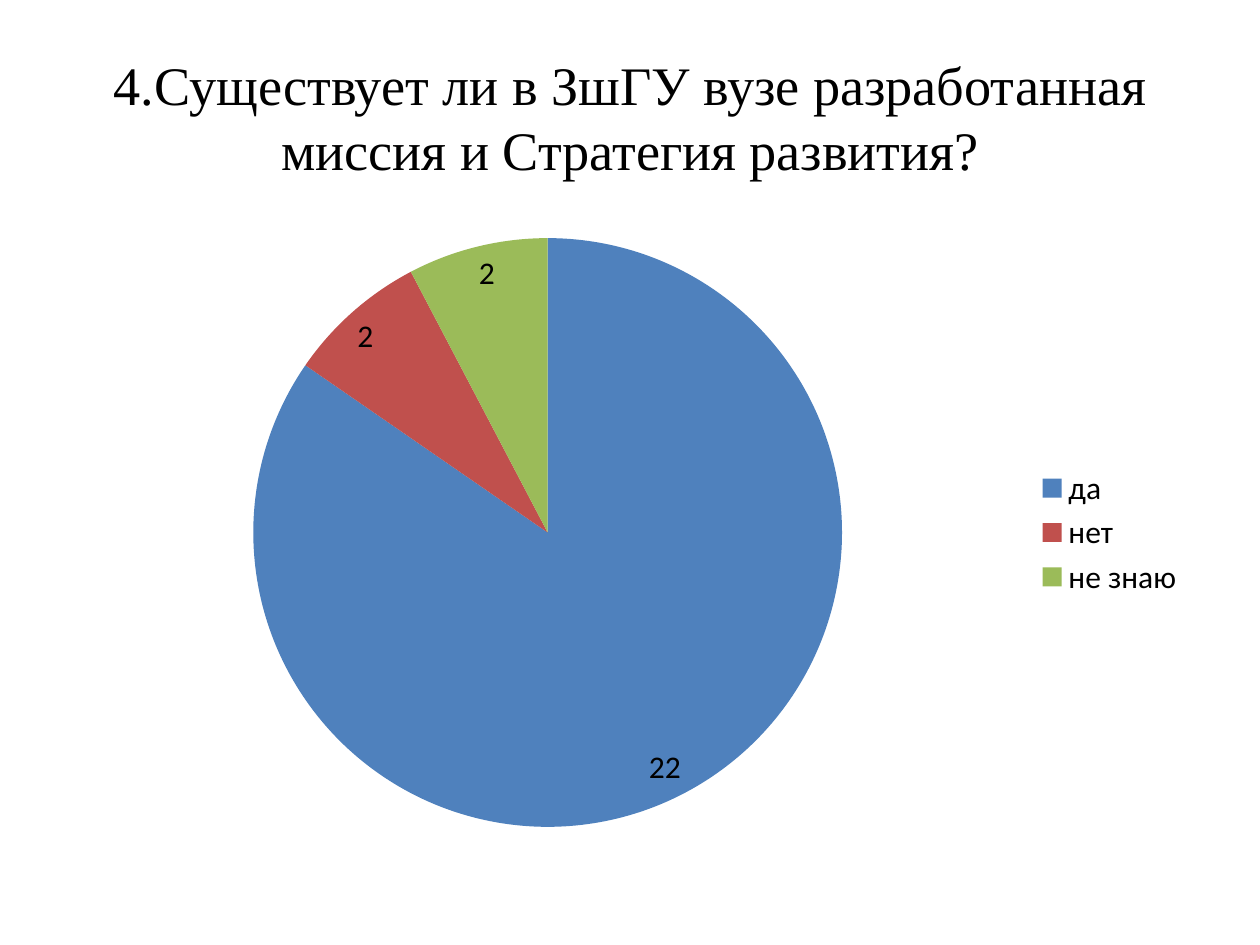
from pptx import Presentation
from pptx.chart.data import CategoryChartData
from pptx.dml.color import RGBColor
from pptx.enum.chart import XL_CHART_TYPE, XL_LABEL_POSITION, XL_LEGEND_POSITION
from pptx.enum.text import MSO_ANCHOR, PP_ALIGN
from pptx.util import Cm, Pt

QUESTION = "4.Существует ли в ЗшГУ вузе разработанная миссия и Стратегия развития?"
ANSWERS = [("да", 22, "yes"), ("нет", 2, "no"), ("не знаю", 2, "unsure")]
COLORS = {"text": "000000", "yes": "4F81BD", "no": "C0504D", "unsure": "9BBB59"}

MARGIN, WIDTH = Cm(1.27), Cm(22.86)


def color(name):
    return RGBColor.from_string(COLORS[name])


prs = Presentation()
prs.slide_width, prs.slide_height = Cm(25.4), Cm(19.05)
slide = prs.slides.add_slide(prs.slide_layouts[6])

# Question heading
heading = slide.shapes.add_textbox(MARGIN, Cm(0.76), WIDTH, Cm(3.18)).text_frame
heading.word_wrap = True
heading.vertical_anchor = MSO_ANCHOR.MIDDLE
question = heading.paragraphs[0]
question.alignment = PP_ALIGN.CENTER
run = question.add_run()
run.text = QUESTION
run.font.name = "Times New Roman"
run.font.size = Pt(31)
run.font.color.rgb = color("text")

# Pie of answers
votes = CategoryChartData()
votes.categories = [answer for answer, _, _ in ANSWERS]
votes.add_series("Series 1", [count for _, count, _ in ANSWERS])
pie = slide.shapes.add_chart(
    XL_CHART_TYPE.PIE, MARGIN, Cm(4.45), WIDTH, Cm(12.57), votes
).chart
pie.has_title = False
pie.font.name = "Calibri"
pie.font.size = Pt(18)
pie.font.color.rgb = color("text")

plot = pie.plots[0]
plot.vary_by_categories = True
for index, (_, _, shade) in enumerate(ANSWERS):
    slice_fill = plot.series[0].points[index].format.fill
    slice_fill.solid()
    slice_fill.fore_color.rgb = color(shade)

# Value labels and legend
plot.has_data_labels = True
plot.data_labels.show_value = True
plot.data_labels.show_percentage = False
plot.data_labels.position = XL_LABEL_POSITION.INSIDE_END
pie.has_legend = True
pie.legend.position = XL_LEGEND_POSITION.RIGHT
pie.legend.include_in_layout = False

prs.save("out.pptx")
